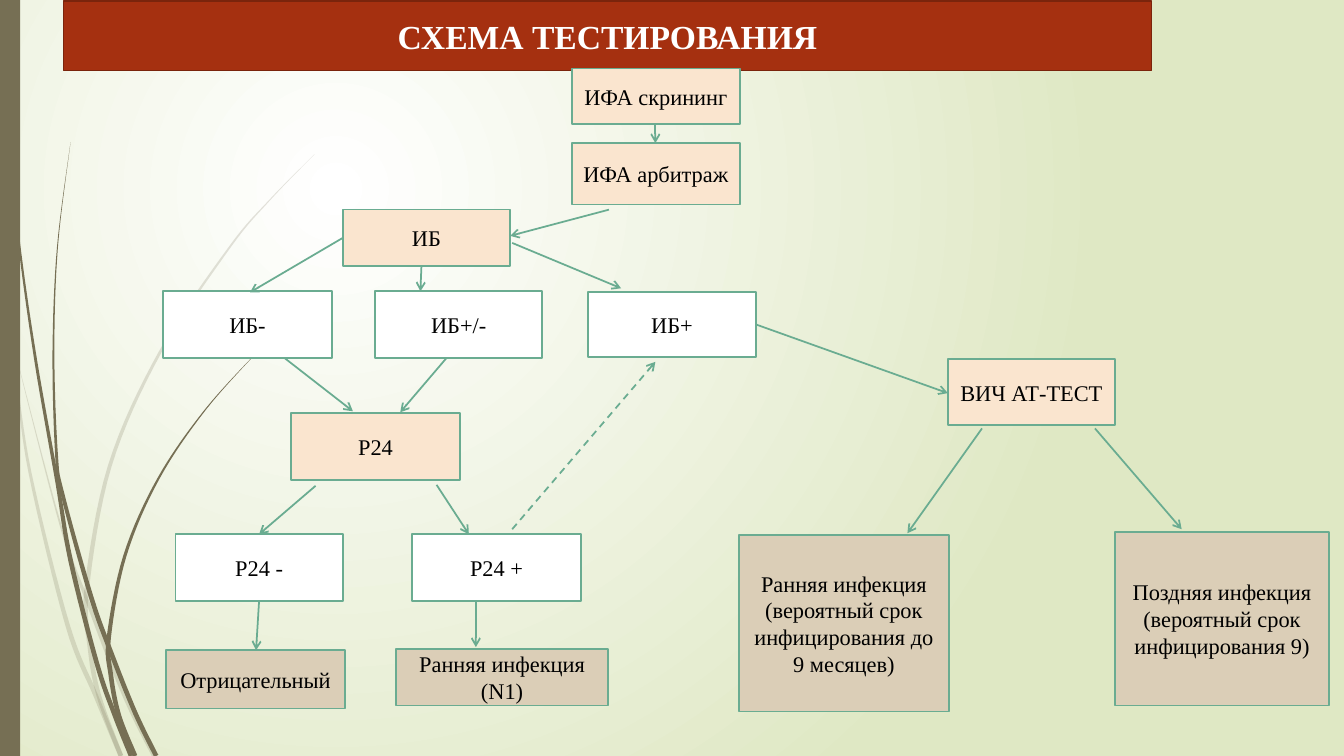
from math import hypot

from pptx import Presentation
from pptx.dml.color import RGBColor
from pptx.enum.dml import MSO_LINE
from pptx.enum.shapes import MSO_CONNECTOR, MSO_SHAPE
from pptx.enum.text import MSO_ANCHOR, PP_ALIGN
from pptx.oxml import parse_xml
from pptx.oxml.ns import nsdecls, qn
from pptx.util import Inches, Pt

RECTANGLE = MSO_SHAPE.RECTANGLE
STRAIGHT = MSO_CONNECTOR.STRAIGHT
DASH = MSO_LINE.DASH
MIDDLE = MSO_ANCHOR.MIDDLE
CENTER = PP_ALIGN.CENTER
TITLE_ONLY = 5

FONT = "Times New Roman"
GREEN, BROWN = "6AAC91", "766F54"
STAGE, RESULT, OUTCOME = "FAE5CF", "FFFFFF", "DBCEB7"

PALE_STEMS = [
    [(0, 2.9), (0.14, 3.63), (0.3, 4.7), (0.67, 6.2), (0.95, 6.9), (1.2, 7.5)],
    [(0.14, 3.45), (0.6, 5.21), (0.9, 6.05), (1.25, 6.93), (1.53, 7.5)],
    [(3.12, 1.53), (2.68, 1.98), (2.28, 2.45), (1.59, 3.49), (1.09, 4.62),
     (0.86, 5.85), (0.89, 6.4), (0.98, 6.9), (1.2, 7.5)],
]
DARK_STEMS = [
    [(0.04, 0), (0.07, 1.1), (0.18, 2.33), (0.35, 3.55), (0.57, 4.8),
     (0.7, 5.56), (0.96, 6.58), (1.14, 7.1), (1.3, 7.5)],
    [(0.7, 1.41), (0.57, 2.45), (0.53, 3.49), (0.56, 4.5), (0.62, 4.9),
     (0.9, 5.91), (1.1, 6.47), (1.34, 7.07), (1.55, 7.5)],
    [(2.6, 3.44), (2.04, 4.06), (1.57, 4.75), (1.24, 5.51), (1.08, 6.32),
     (1.1, 6.7), (1.18, 7.1), (1.34, 7.5)],
]
BOXES = [
    ("ИФА скрининг", 5.67, 0.68, 1.67, 0.55, STAGE),
    ("ИФА арбитраж", 5.67, 1.42, 1.67, 0.61, STAGE),
    ("ИБ", 3.4, 2.08, 1.66, 0.56, STAGE),
    ("ИБ-", 1.62, 2.89, 1.67, 0.66, RESULT),
    ("ИБ+/-", 3.72, 2.89, 1.66, 0.66, RESULT),
    ("ИБ+", 5.83, 2.9, 1.67, 0.64, RESULT),
    ("ВИЧ АТ-ТЕСТ", 9.4, 3.56, 1.66, 0.66, STAGE),
    ("Р24", 2.89, 4.1, 1.67, 0.66, STAGE),
    ("Р24 -", 1.74, 5.3, 1.66, 0.66, RESULT),
    ("Р24 +", 4.09, 5.3, 1.67, 0.66, RESULT),
    ("Отрицательный", 1.65, 6.45, 1.77, 0.58, OUTCOME),
    ("Ранняя инфекция (N1)", 3.93, 6.44, 2.1, 0.56, OUTCOME),
    ("Ранняя инфекция (вероятный срок инфицирования до 9 месяцев)",
     7.33, 5.31, 2.08, 1.75, OUTCOME),
    ("Поздняя инфекция\n(вероятный срок инфицирования 9)",
     11.06, 5.28, 2.12, 1.72, OUTCOME),
]
ARROWS = [
    (6.5, 1.23, 6.5, 1.42), (6.04, 2.08, 5.06, 2.34),
    (3.4, 2.36, 2.48, 2.9), (4.18, 2.64, 4.17, 2.89),
    (5.08, 2.41, 6.16, 2.86), (2.82, 3.55, 3.5, 4.08),
    (4.43, 3.55, 3.97, 4.09), (3.13, 4.82, 2.57, 5.3),
    (4.33, 4.81, 4.65, 5.3), (2.57, 5.96, 2.54, 6.45),
    (4.72, 5.96, 4.72, 6.42), (7.5, 3.22, 9.4, 3.9),
    (9.74, 4.25, 9, 5.29), (10.86, 4.25, 11.72, 5.25),
]


def color(hex_value):
    """Turn a hex string into a colour."""
    return RGBColor.from_string(hex_value)


def write_text(shape, text, size=16, text_color="000000", bold=False):
    """Write centred paragraphs, one for each line of the text."""
    frame = shape.text_frame
    frame.text = text
    frame.word_wrap = True
    frame.vertical_anchor = MIDDLE
    for paragraph in frame.paragraphs:
        paragraph.alignment = CENTER
        font = paragraph.runs[0].font
        font.name, font.size, font.bold = FONT, Pt(size), bold
        font.color.rgb = color(text_color)


def paint(shape, fill, line=None):
    """Set a solid fill and an outline, or no outline."""
    shape.fill.solid()
    shape.fill.fore_color.rgb = color(fill)
    if line:
        shape.line.color.rgb = color(line)
        shape.line.width = Pt(1.25)
    else:
        shape.line.fill.background()


def add_box(slide, text, left, top, width, height, fill, line=GREEN):
    """Add a rectangle with optional text."""
    box = slide.shapes.add_shape(
        RECTANGLE, Inches(left), Inches(top), Inches(width), Inches(height))
    box.shadow.inherit = False
    paint(box, fill, line)
    if text:
        write_text(box, text)


def add_arrow(slide, x1, y1, x2, y2, dashed=False):
    """Add a straight line with an open arrowhead at its end."""
    arrow = slide.shapes.add_connector(
        STRAIGHT, Inches(x1), Inches(y1), Inches(x2), Inches(y2))
    arrow.line.color.rgb = color(GREEN)
    arrow.line.width = Pt(1.25)
    if dashed:
        arrow.line.dash_style = DASH
    properties = arrow.element.spPr
    properties.find(qn("a:ln")).append(
        parse_xml(f'<a:tailEnd {nsdecls("a")} type="arrow"/>'))
    properties.append(parse_xml(f'<a:effectLst {nsdecls("a")}/>'))


def smooth_curve(points, steps=8):
    """Return points of a smooth curve through the given points."""
    padded = [points[0], *points, points[-1]]
    curve = []
    for a, b, c, d in zip(padded, padded[1:], padded[2:], padded[3:]):
        for step in range(steps):
            t = step / steps
            curve.append(tuple(
                q + t / 2 * (r - p + t * (2 * p - 5 * q + 4 * r - s
                                          + t * (3 * (q - r) + s - p)))
                for p, q, r, s in zip(a, b, c, d)))
    return curve + [points[-1]]


def add_stem(slide, points, opacity=100):
    """Add a curved grass stem that thickens from its tip."""
    curve = smooth_curve(points)
    last = len(curve) - 1
    left_side, right_side = [], []
    for index, (x, y) in enumerate(curve):
        before, after = curve[max(index - 1, 0)], curve[min(index + 1, last)]
        dx, dy = after[0] - before[0], after[1] - before[1]
        half = 0.023 * min(1, 1.6 * index / last) / hypot(dx, dy)
        left_side.append((Inches(x - dy * half), Inches(y + dx * half)))
        right_side.append((Inches(x + dy * half), Inches(y - dx * half)))
    outline = left_side + right_side[::-1]
    builder = slide.shapes.build_freeform(*outline[0])
    builder.add_line_segments(outline[1:], close=True)
    stem = builder.convert_to_shape()
    stem.shadow.inherit = False
    paint(stem, BROWN)
    if opacity < 100:
        stem.element.spPr.find(".//" + qn("a:srgbClr")).append(
            parse_xml(f'<a:alpha {nsdecls("a")} val="{opacity * 1000}"/>'))


def set_background(slide):
    """Fill the background with a round gradient."""
    fill = slide.background.fill
    fill.gradient()
    for stop, position, hex_value in zip(
            fill.gradient_stops, (0, 1), ("FFFFFF", "DFE8C4")):
        stop.position = position
        stop.color.rgb = color(hex_value)
    gradient = slide.element.find(".//" + qn("a:gradFill"))
    gradient.replace(gradient.find(qn("a:lin")), parse_xml(
        f'<a:path {nsdecls("a")} path="circle"><a:fillToRect l="50000" '
        't="50000" r="100000" b="100000"/></a:path>'))


def add_title(slide, text):
    """Place and format the title banner."""
    title = slide.shapes.title
    title.left, title.top = Inches(0.63), Inches(0.01)
    title.width, title.height = Inches(10.79), Inches(0.69)
    paint(title, "A53010", "7A240C")
    write_text(title, text, size=24, text_color="FFFFFF", bold=True)


def main():
    """Build the testing scheme slide."""
    presentation = Presentation()
    presentation.slide_width = Inches(13.33)
    presentation.slide_height = Inches(7.5)
    slide = presentation.slides.add_slide(
        presentation.slide_layouts[TITLE_ONLY])
    set_background(slide)
    for points in PALE_STEMS:
        add_stem(slide, points, opacity=20)
    for points in DARK_STEMS:
        add_stem(slide, points)
    add_box(slide, "", 0, 0, 0.2, 7.5, BROWN, line=None)
    add_title(slide, "СХЕМА ТЕСТИРОВАНИЯ")
    for box in BOXES:
        add_box(slide, *box)
    for arrow in ARROWS:
        add_arrow(slide, *arrow)
    add_arrow(slide, 5.08, 5.25, 6.5, 3.59, dashed=True)
    presentation.save("out.pptx")


if __name__ == "__main__":
    main()
